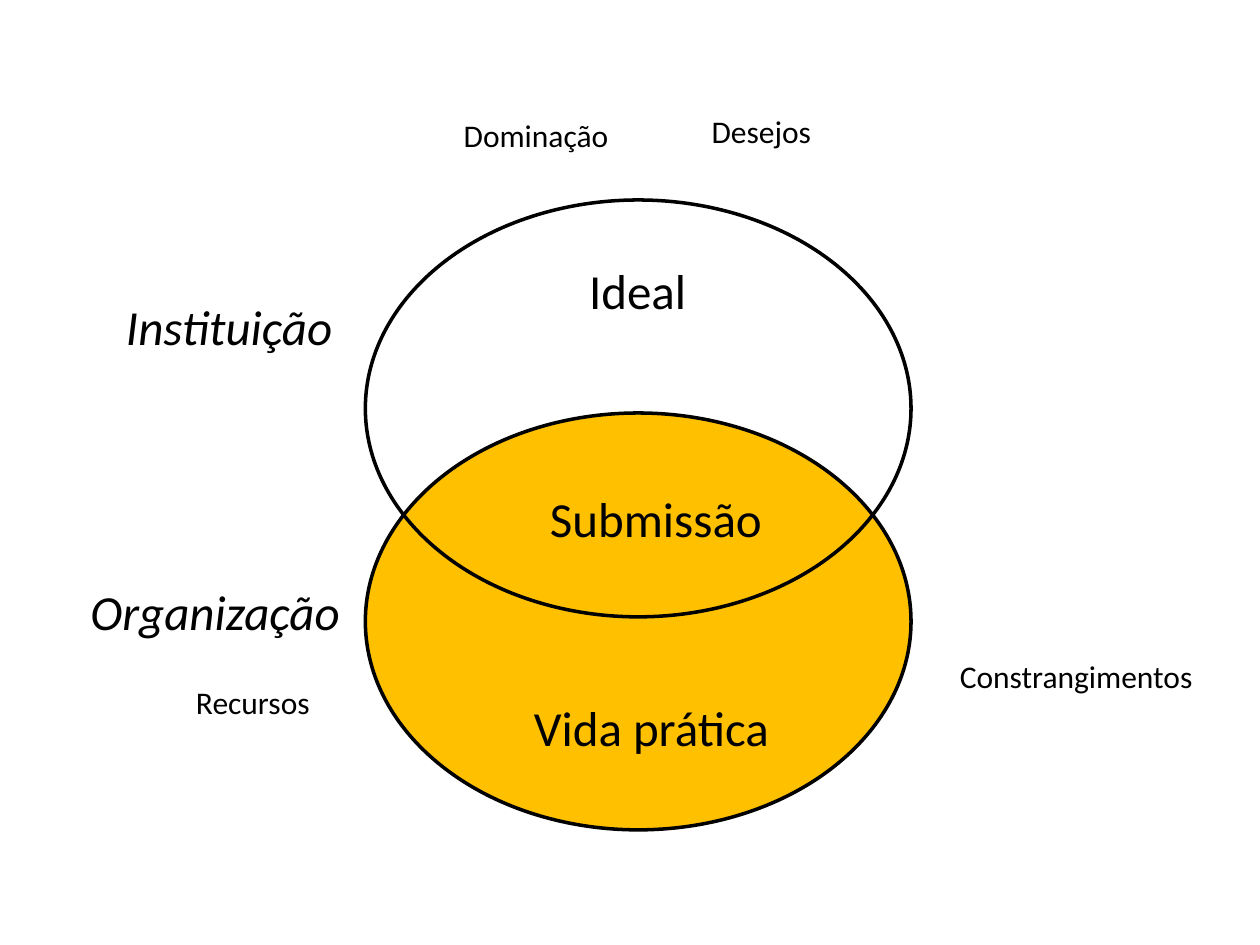
"""Build a slide with two overlapping ellipses and the labels around them."""
from pptx import Presentation
from pptx.dml.color import RGBColor
from pptx.enum.shapes import MSO_SHAPE
from pptx.enum.text import MSO_AUTO_SIZE
from pptx.util import Pt

OVAL = MSO_SHAPE.OVAL
GROW = MSO_AUTO_SIZE.SHAPE_TO_FIT_TEXT
BLACK = "000000"
AMBER = "FFC000"


def color(hex_value):
    return RGBColor.from_string(hex_value)


presentation = Presentation()
presentation.slide_width = Pt(720)
presentation.slide_height = Pt(540)
slide = presentation.slides.add_slide(presentation.slide_layouts[6])

for top, fill in ((236, AMBER), (114.3, None)):
    ellipse = slide.shapes.add_shape(OVAL, Pt(208.8), Pt(top), Pt(311.8), Pt(238.2))
    ellipse.shadow.inherit = False
    if fill:
        ellipse.fill.solid()
        ellipse.fill.fore_color.rgb = color(fill)
    else:
        ellipse.fill.background()
    ellipse.line.color.rgb = color(BLACK)
    ellipse.line.width = Pt(2)

small = {"size": Pt(18), "name": "Calibri"}
large = {"size": Pt(28), "name": "Calibri"}
large_italic = {**large, "italic": True}

labels = (
    ("Desejos", 399.6, 60.5, 72, 29, small),
    ("Dominação", 257.9, 62.6, 97.9, 29, small),
    ("Constrangimentos", 541.4, 371.9, 149, 29, small),
    ("Recursos", 104.9, 386.6, 79.9, 29, small),
    ("Submissão", 307.2, 275.8, 135.4, 41, large),
    ("Ideal", 329.5, 145.4, 70.6, 41, large),
    ("Vida prática", 298, 395.3, 150.5, 41, large),
    ("Organização", 44.6, 329, 158.4, 41, large_italic),
    ("Instituição", 64.9, 165.9, 133.9, 41, large_italic),
)

for text, left, top, width, height, font_format in labels:
    label = slide.shapes.add_textbox(Pt(left), Pt(top), Pt(width), Pt(height))
    frame = label.text_frame
    frame.word_wrap = False
    frame.auto_size = GROW
    run = frame.paragraphs[0].add_run()
    run.text = text
    run.font.color.rgb = color(BLACK)
    for attribute, value in font_format.items():
        setattr(run.font, attribute, value)

presentation.save("out.pptx")
